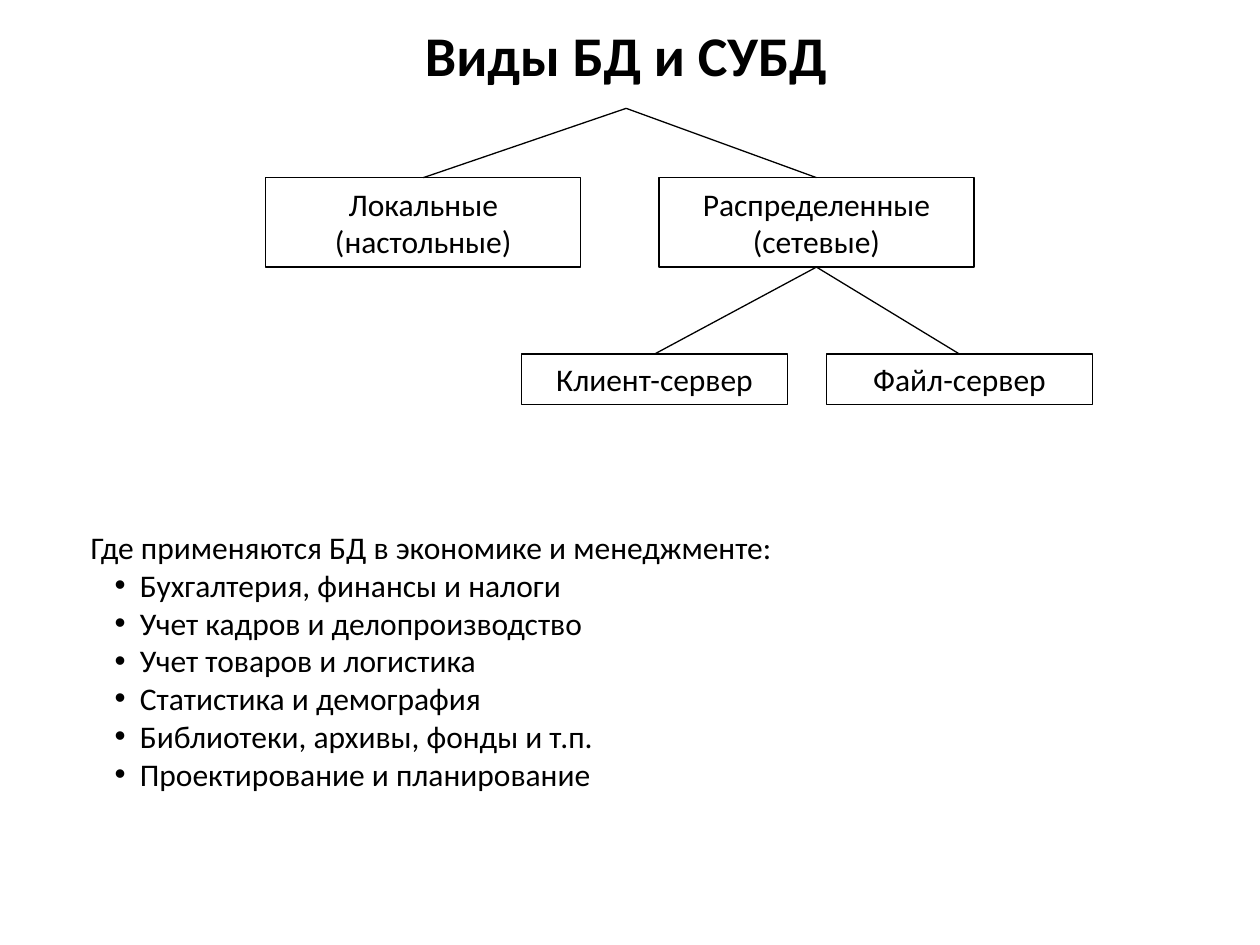
from lxml import etree
from pptx import Presentation
from pptx.dml.color import RGBColor
from pptx.enum.shapes import MSO_CONNECTOR, MSO_SHAPE
from pptx.enum.text import MSO_ANCHOR, MSO_AUTO_SIZE, PP_ALIGN
from pptx.oxml.ns import qn
from pptx.util import Inches, Pt

STRAIGHT, RECTANGLE = MSO_CONNECTOR.STRAIGHT, MSO_SHAPE.RECTANGLE
MIDDLE, CENTER, LEFT = MSO_ANCHOR.MIDDLE, PP_ALIGN.CENTER, PP_ALIGN.LEFT
NO_AUTOFIT = MSO_AUTO_SIZE.NONE
TOP_SIDE, BOTTOM_SIDE = 0, 2
BLACK, FONT = "000000", "Calibri"

HEADING = "Виды БД и СУБД"
# Each level: top, box width, box height, then (label, left, parent)
LEVELS = [
    (1.41, 2.5, 0.71, [("Локальные (настольные)", 2.11, HEADING),
                       ("Распределенные (сетевые)", 5.23, HEADING)]),
    (2.81, 2.11, 0.4, [("Клиент-сервер", 4.14, "Распределенные (сетевые)"),
                       ("Файл-сервер", 6.56, "Распределенные (сетевые)")]),
]
QUESTION = "Где применяются БД в экономике и менеджменте:"
APPLICATIONS = [
    "Бухгалтерия, финансы и налоги",
    "Учет кадров и делопроизводство",
    "Учет товаров и логистика",
    "Статистика и демография",
    "Библиотеки, архивы, фонды и т.п.",
    "Проектирование и планирование",
]


def color(hex_code):
    return RGBColor.from_string(hex_code)


def place(shape, left, top, width, height):
    bounds = {"left": left, "top": top, "width": width, "height": height}
    for side, inches in bounds.items():
        setattr(shape, side, Inches(inches))


def write(paragraph, text, size=18, bold=False, align=LEFT):
    paragraph.text = text
    paragraph.alignment = align
    paragraph.space_before = Pt(0)
    font = paragraph.runs[0].font
    for key, value in {"name": FONT, "size": Pt(size), "bold": bold}.items():
        setattr(font, key, value)
    font.color.rgb = color(BLACK)


def set_bullet(paragraph, char=None):
    """Give the paragraph a hanging bullet, or none at all."""
    margin, indent = (0.39, -0.2) if char else (0, 0)
    properties = paragraph._p.get_or_add_pPr()
    properties.set("marL", str(Inches(margin)))
    properties.set("indent", str(Inches(indent)))
    if char:
        font = etree.SubElement(properties, qn("a:buFont"))
        font.set("typeface", "Arial")
        etree.SubElement(properties, qn("a:buChar")).set("char", char)
    else:
        etree.SubElement(properties, qn("a:buNone"))


def outline(shape):
    shape.line.color.rgb = color(BLACK)
    shape.line.width = Pt(0.75)


def add_box(shapes, label, left, top, width, height):
    box = shapes.add_shape(RECTANGLE, *map(Inches, (left, top, width, height)))
    box.shadow.inherit = False
    box.fill.background()
    outline(box)
    box.text_frame.word_wrap = True
    box.text_frame.vertical_anchor = MIDDLE
    write(box.text_frame.paragraphs[0], label, align=CENTER)
    return box


def add_branch(shapes, parent, child):
    branch = shapes.add_connector(STRAIGHT, 0, 0, 0, 0)
    branch.begin_connect(parent, BOTTOM_SIDE)
    branch.end_connect(child, TOP_SIDE)
    outline(branch)
    etree.SubElement(branch._element.spPr, qn("a:effectLst"))


def main():
    prs = Presentation()
    prs.slide_width, prs.slide_height = Inches(10), Inches(7.5)
    slide = prs.slides.add_slide(prs.slide_layouts[1])
    shapes = slide.shapes

    title = shapes.title
    place(title, 0.47, 0, 9, 0.86)
    title.text_frame.vertical_anchor = MIDDLE
    title.text_frame.auto_size = NO_AUTOFIT
    write(title.text_frame.paragraphs[0], HEADING, 32, True, CENTER)

    nodes = {HEADING: title}
    for top, width, height, boxes in LEVELS:
        for label, left, parent in boxes:
            nodes[label] = add_box(shapes, label, left, top, width, height)
            add_branch(shapes, nodes[parent], nodes[label])

    body = slide.placeholders[1]
    place(body, 0.62, 4.14, 7.66, 2.22)
    frame = body.text_frame
    frame.auto_size = NO_AUTOFIT
    write(frame.paragraphs[0], QUESTION)
    set_bullet(frame.paragraphs[0])
    for application in APPLICATIONS:
        item = frame.add_paragraph()
        write(item, application)
        set_bullet(item, "•")

    prs.save("out.pptx")


if __name__ == "__main__":
    main()
